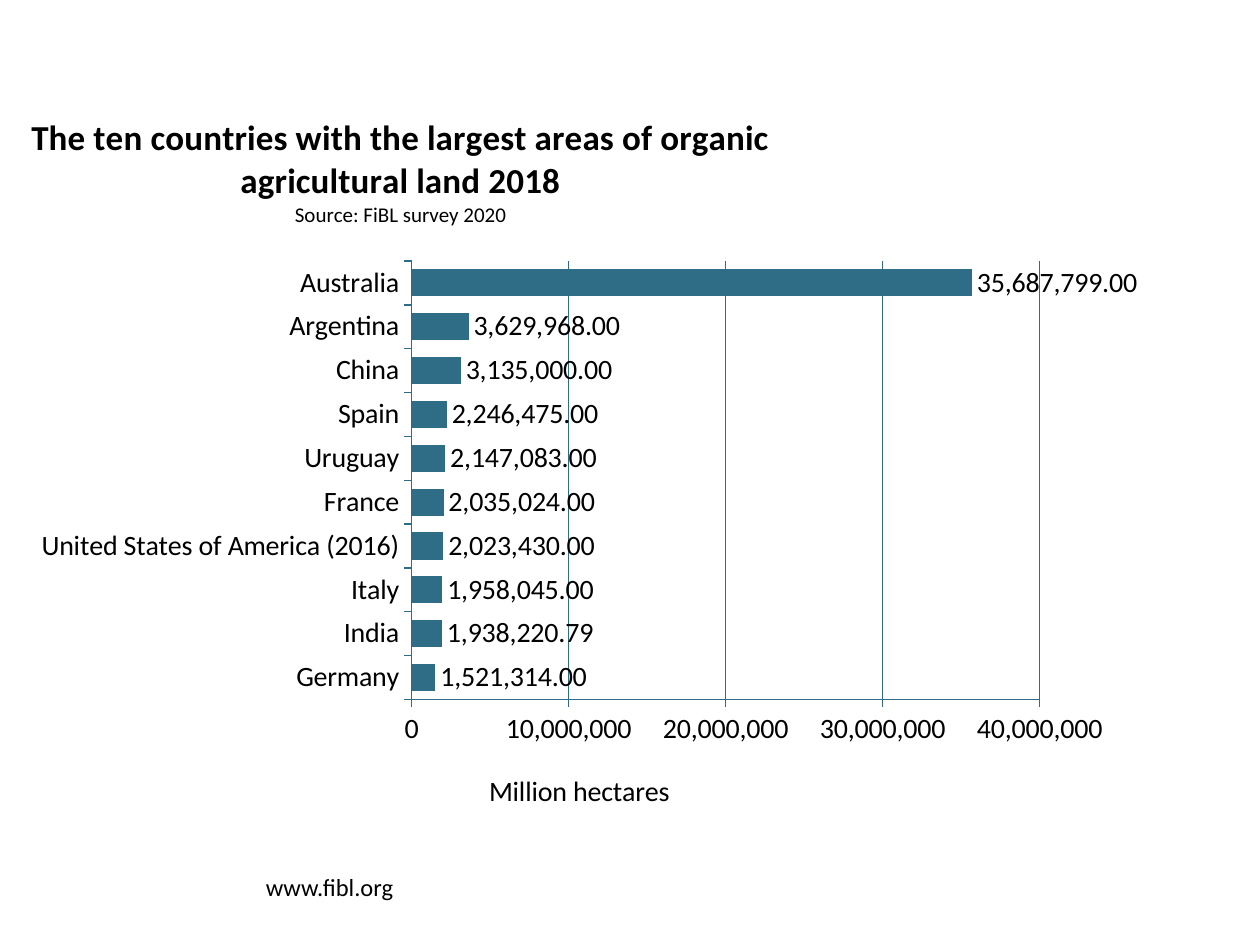
from lxml.etree import fromstring
from pptx import Presentation
from pptx.chart.data import CategoryChartData as Data
from pptx.dml.color import RGBColor as Rgb
from pptx.enum.chart import XL_CHART_TYPE as Kind, XL_LABEL_POSITION as Pos, XL_TICK_MARK as Tick
from pptx.enum.text import MSO_ANCHOR as Anchor
from pptx.oxml.ns import nsdecls, qn
from pptx.util import Inches, Pt

THEME = {
    "font": "Calibri", "ink": Rgb.from_string("000000"), "bar": Rgb.from_string("2F6C86"),
    "title": 20, "source": 12, "label": 16, "foot": 14, "line": 0.75,
}
TITLE = "The ten countries with the largest areas of organic agricultural land 2018"
SOURCE = "Source: FiBL survey 2020"
UNIT = "Million hectares"
SITE = "www.fibl.org"
AREAS = [
    ("Germany", 1521314), ("India", 1938220.79), ("Italy", 1958045),
    ("United States of America (2016)", 2023430), ("France", 2035024),
    ("Uruguay", 2147083), ("Spain", 2246475), ("China", 3135000),
    ("Argentina", 3629968), ("Australia", 35687799),
]
CHART_BOX = (0.2, 0.8, 8.84, 5.81)
PLOT_BOX = (3.27, 2.07, 4.99, 3.48)
TITLE_AT = (0.22, 0.87)
UNIT_AT = (3.84, 6.09)
SITE_BOX = (2.11, 6.86, 2.99, 0.34)


def put(obj, vals):
    for key, val in vals.items():
        setattr(obj, key, val)


def style(font, size, bold=False):
    put(font, {"name": THEME["font"], "size": Pt(THEME[size]), "bold": bold})
    font.color.rgb = THEME["ink"]


def write(para, text, size, bold=False):
    run = para.add_run()
    run.text = text
    style(run.font, size, bold)


def rule(line):
    line.color.rgb = THEME["bar"]
    line.width = Pt(THEME["line"])


def place(node, box, inner=False):
    left, top, wide, high = CHART_BOX
    rel = [(box[0] - left) / wide, (box[1] - top) / high]
    rel += [size / full for size, full in zip(box[2:], (wide, high))]
    parts = '<c:layoutTarget val="inner"/>' if inner else ""
    parts += '<c:xMode val="edge"/><c:yMode val="edge"/>'
    parts += "".join(f'<c:{tag} val="{val:.3f}"/>' for tag, val in zip("xywh", rel))
    for old in node.findall(qn("c:layout")):
        node.remove(old)
    spot = 0 if inner else 1
    node.insert(spot, fromstring(
        f'<c:layout {nsdecls("c")}><c:manualLayout>{parts}</c:manualLayout></c:layout>'))


def add_chart(slide):
    data = Data(number_format="#,##0.00")
    data.categories = [name for name, area in AREAS]
    data.add_series("Series 1", [area for name, area in AREAS])
    chart = slide.shapes.add_chart(
        Kind.BAR_CLUSTERED, *map(Inches, CHART_BOX), data).chart
    chart.has_legend = False
    style(chart.font, "label")

    frame = chart.chart_title.text_frame
    write(frame.paragraphs[0], TITLE, "title", True)
    write(frame.add_paragraph(), SOURCE, "source")
    place(chart.chart_title._element, TITLE_AT)

    plot = chart.plots[0]
    put(plot, {"gap_width": 62, "vary_by_categories": False, "has_data_labels": True})
    put(plot.data_labels, {
        "show_value": True, "position": Pos.OUTSIDE_END,
        "number_format": "#,##0.00", "number_format_is_linked": False})
    style(plot.data_labels.font, "label")
    fill = plot.series[0].format.fill
    fill.solid()
    fill.fore_color.rgb = THEME["bar"]

    axis = chart.value_axis
    put(axis, {"minimum_scale": 0, "maximum_scale": 40000000, "major_unit": 10000000,
               "has_major_gridlines": True})
    put(axis.tick_labels, {"number_format": "#,##0", "number_format_is_linked": False})
    rule(axis.major_gridlines.format.line)
    for side in (axis, chart.category_axis):
        side.major_tick_mark = Tick.OUTSIDE
        rule(side.format.line)
        style(side.tick_labels.font, "label")
    write(axis.axis_title.text_frame.paragraphs[0], UNIT, "label")
    place(axis.axis_title._element, UNIT_AT)
    place(chart._chartSpace.chart.plotArea, PLOT_BOX, True)


def add_site(slide):
    frame = slide.shapes.add_textbox(*map(Inches, SITE_BOX)).text_frame
    put(frame, {"word_wrap": True, "vertical_anchor": Anchor.BOTTOM,
                "margin_left": 0, "margin_right": 0})
    write(frame.paragraphs[0], SITE, "foot")


def main():
    deck = Presentation()
    put(deck, {"slide_width": Inches(10), "slide_height": Inches(7.5)})
    slide = deck.slides.add_slide(deck.slide_layouts[6])
    add_site(slide)
    add_chart(slide)
    deck.save("out.pptx")


if __name__ == "__main__":
    main()
